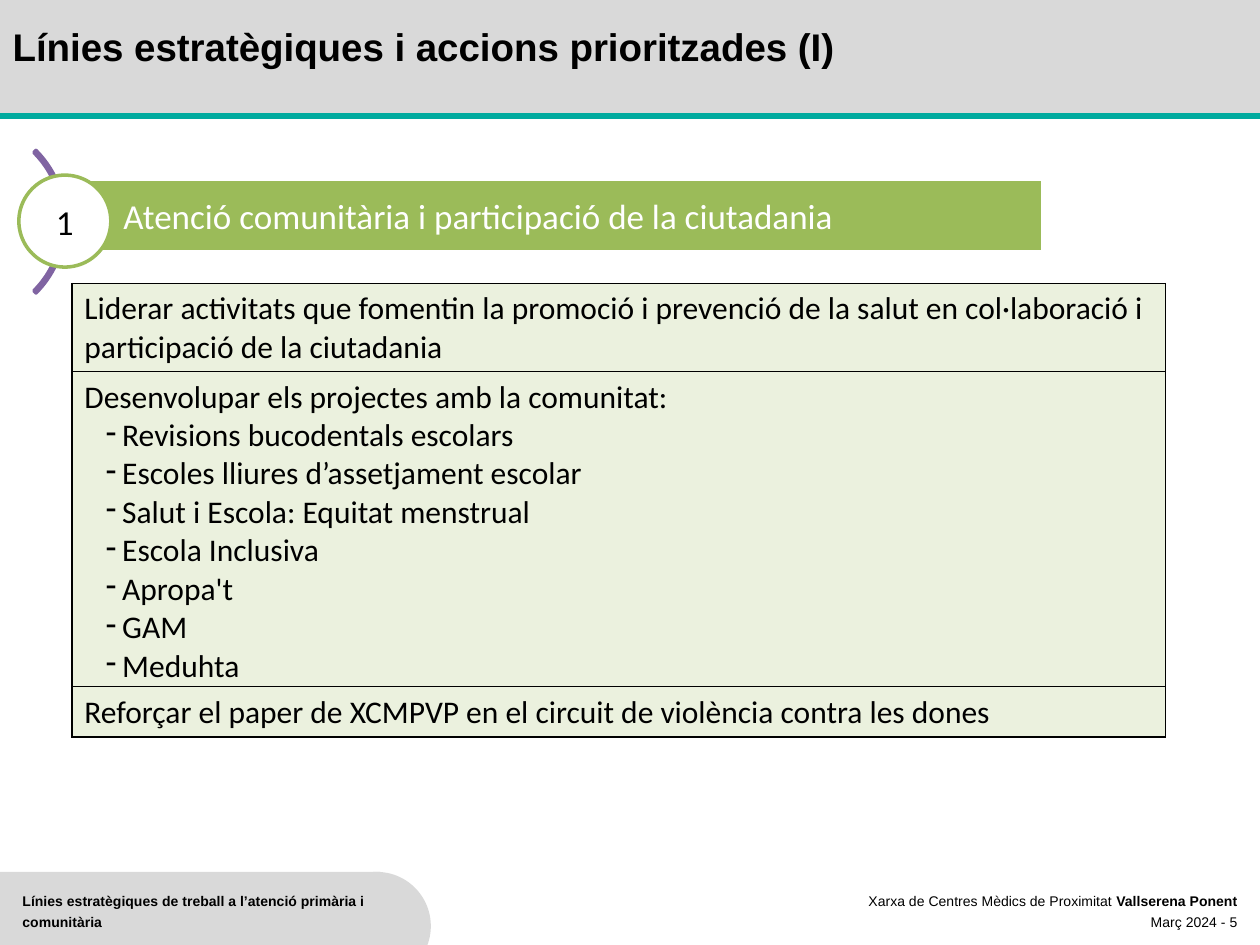
from lxml.etree import SubElement
from pptx import Presentation
from pptx.dml.color import RGBColor
from pptx.enum.shapes import MSO_CONNECTOR, MSO_SHAPE
from pptx.enum.text import MSO_ANCHOR, PP_ALIGN
from pptx.oxml.ns import qn
from pptx.util import Inches, Pt

COLORS = {
    "black": "000000",
    "white": "FFFFFF",
    "grey": "D9D9D9",
    "teal": "00AA9E",
    "green": "9BBB59",
    "pale": "EBF1DE",
    "purple": "8064A2",
}
TITLE = "Línies estratègiques i accions prioritzades (I)"
ACTIONS = [
    (0.7, ["Liderar activitats que fomentin la promoció i prevenció de la salut "
           "en col·laboració i participació de la ciutadania"]),
    (2.5, ["Desenvolupar els projectes amb la comunitat:",
           "Revisions bucodentals escolars",
           "Escoles lliures d’assetjament escolar",
           "Salut i Escola: Equitat menstrual",
           "Escola Inclusiva",
           "Apropa't",
           "GAM",
           "Meduhta"]),
    (0.4, ["Reforçar el paper de XCMPVP en el circuit de violència contra les dones"]),
]


def color(name):
    return RGBColor.from_string(COLORS[name])


class SlideBuilder:
    def __init__(self, page):
        self.page = page

    def style(self, paragraph, size, font, ink="black", bold=False, spacing=None):
        if spacing:
            paragraph.line_spacing = spacing
        for span in paragraph.runs:
            span.font.size = Pt(size)
            span.font.name = font
            span.font.bold = bold
            span.font.color.rgb = color(ink)

    def frame(self, box, anchor=MSO_ANCHOR.TOP, left=0.1):
        frame = box.text_frame
        frame.word_wrap = True
        frame.vertical_anchor = anchor
        frame.margin_left = Inches(left)
        return frame

    def title(self, text, *place):
        box = self.page.shapes.title
        box.left, box.top, box.width, box.height = map(Inches, place)
        frame = self.frame(box)
        frame.text = text
        paragraph = frame.paragraphs[0]
        paragraph.alignment = PP_ALIGN.LEFT
        self.style(paragraph, 22, "Arial", bold=True, spacing=Pt(22))

    def shape(self, kind, *place, fill=None, line=None):
        shape = self.page.shapes.add_shape(kind, *map(Inches, place))
        shape.shadow.inherit = False
        if fill:
            shape.fill.solid()
            shape.fill.fore_color.rgb = color(fill)
        else:
            shape.fill.background()
        if line:
            shape.line.color.rgb = color(line)
            shape.line.width = Pt(2)
        else:
            shape.line.fill.background()
        return shape

    def rule(self, left, top, right, ink, width):
        line = self.page.shapes.add_connector(
            MSO_CONNECTOR.STRAIGHT, Inches(left), Inches(top), Inches(right), Inches(top))
        line.line.color.rgb = color(ink)
        line.line.width = Pt(width)
        SubElement(line._element.spPr, qn("a:effectLst"))

    def footer(self, lines, *place, align=PP_ALIGN.LEFT):
        frame = self.frame(self.page.shapes.add_textbox(*map(Inches, place)))
        for index, spans in enumerate(lines):
            paragraph = frame.add_paragraph() if index else frame.paragraphs[0]
            paragraph.alignment = align
            for text, _ in spans:
                paragraph.add_run().text = text
            self.style(paragraph, 8, "Arial", spacing=Pt(12))
            for span, (_, bold) in zip(paragraph.runs, spans):
                span.font.bold = bold

    def label(self, box, text, ink, align, left=0.1):
        frame = self.frame(box, MSO_ANCHOR.MIDDLE, left)
        frame.text = text
        frame.paragraphs[0].alignment = align
        self.style(frame.paragraphs[0], 20, "Calibri", ink)

    def borders(self, cell):
        properties = cell._tc.get_or_add_tcPr()
        for side in ("lnL", "lnR", "lnT", "lnB"):
            line = SubElement(properties, qn(f"a:{side}"), w=str(Pt(1)))
            fill = SubElement(line, qn("a:solidFill"))
            SubElement(fill, qn("a:srgbClr"), val=COLORS["black"])

    def dash(self, paragraph):
        properties = paragraph._p.get_or_add_pPr()
        properties.set("marL", str(Inches(0.3)))
        properties.set("indent", str(Inches(-0.13)))
        SubElement(properties, qn("a:buChar"), char="-")

    def table(self, rows, left, top, width):
        height = sum(size for size, _ in rows)
        table = self.page.shapes.add_table(
            len(rows), 1, *map(Inches, (left, top, width, height))).table
        table.first_row = table.horz_banding = False
        for index, (size, lines) in enumerate(rows):
            table.rows[index].height = Inches(size)
            cell = table.cell(index, 0)
            self.borders(cell)
            cell.fill.solid()
            cell.fill.fore_color.rgb = color("pale")
            cell.margin_bottom = 0
            cell.text_frame.text = "\n".join(lines)
            for number, paragraph in enumerate(cell.text_frame.paragraphs):
                if number:
                    self.dash(paragraph)
                self.style(paragraph, 18, "Calibri")


def main():
    deck = Presentation()
    deck.slide_width, deck.slide_height = Inches(10), Inches(7.5)
    builder = SlideBuilder(deck.slides.add_slide(deck.slide_layouts[5]))

    builder.shape(MSO_SHAPE.RECTANGLE, 0, 6.92, 3.02, 0.72, fill="grey")
    builder.shape(MSO_SHAPE.OVAL, 2.56, 6.92, 0.86, 0.86, fill="grey")
    header = builder.shape(MSO_SHAPE.RECTANGLE, 0, 0, 10, 0.92, fill="grey")
    title = builder.page.shapes.title
    header._element.addnext(title._element)
    builder.title(TITLE, 0, 0.19, 8.53, 0.72)
    builder.rule(0, 0.92, 10, "teal", 3)
    builder.footer(
        [[("Línies estratègiques de treball a l’atenció primària i comunitària", True)]],
        0.08, 7, 3.02, 0.47)
    builder.footer(
        [[("Xarxa de Centres Mèdics de Proximitat ", False), ("Vallserena Ponent", True)],
         [("Març 2024 - 5", False)]],
        6.75, 7, 3.17, 0.5, align=PP_ALIGN.RIGHT)

    builder.table(ACTIONS, 0.57, 2.25, 8.68)

    arc = builder.shape(MSO_SHAPE.BLOCK_ARC, -1.08, 0.96, 1.6, 1.6, line="purple")
    for index, value in enumerate((189, 27, 0.015)):
        arc.adjustments[index] = value
    banner = builder.shape(
        MSO_SHAPE.RECTANGLE, 0.33, 1.42, 7.95, 0.58, fill="green", line="white")
    builder.label(banner, "Atenció comunitària i participació de la ciutadania",
                  "white", PP_ALIGN.LEFT, left=0.65)
    badge = builder.shape(
        MSO_SHAPE.OVAL, 0.15, 1.39, 0.73, 0.73, fill="white", line="green")
    builder.label(badge, "1", "black", PP_ALIGN.CENTER)

    deck.save("out.pptx")


if __name__ == "__main__":
    main()
